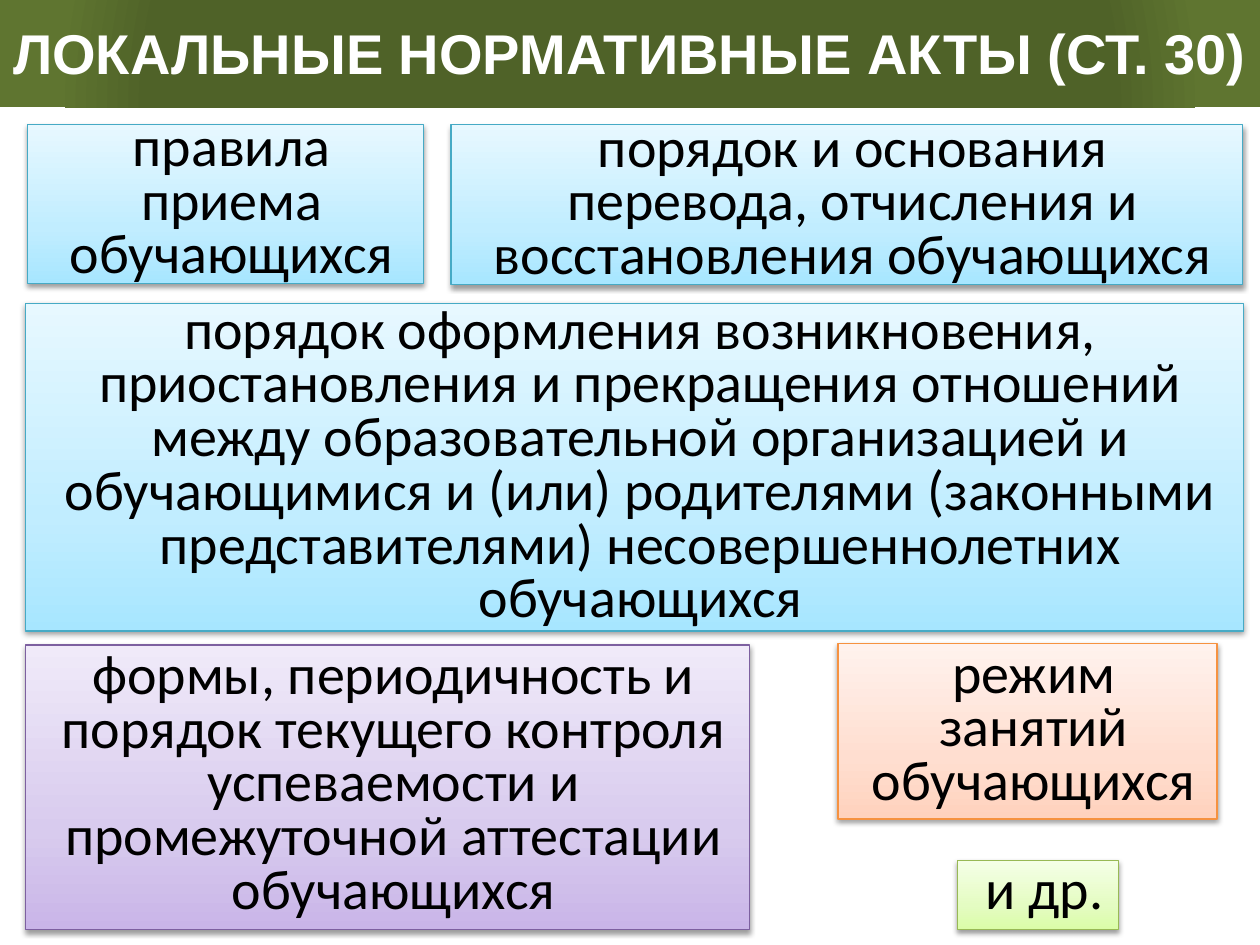
from lxml import etree
from pptx import Presentation
from pptx.dml.color import RGBColor
from pptx.enum.shapes import MSO_SHAPE
from pptx.enum.text import MSO_ANCHOR, MSO_AUTO_SIZE, PP_ALIGN
from pptx.oxml.ns import qn
from pptx.util import Inches, Pt

RECT = MSO_SHAPE.RECTANGLE
TOP, MIDDLE = MSO_ANCHOR.TOP, MSO_ANCHOR.MIDDLE
CENTER = PP_ALIGN.CENTER
NO_AUTOFIT = MSO_AUTO_SIZE.NONE

BLACK = RGBColor(0x00, 0x00, 0x00)
WHITE = RGBColor(0xFF, 0xFF, 0xFF)
BAND_STOPS = [(76, RGBColor(0x4F, 0x62, 0x28)), (91, RGBColor(0x5F, 0x75, 0x30))]


def scheme(line, *colors):
    """Pair a line colour with gradient stops running from bottom to top."""
    return line, list(zip((0, 35, 100), colors))


BLUE = scheme(RGBColor(0x46, 0xAA, 0xC5), RGBColor(0xA7, 0xE6, 0xFF),
              RGBColor(0xC1, 0xED, 0xFF), RGBColor(0xE7, 0xF8, 0xFF))
ORANGE = scheme(RGBColor(0xF6, 0x92, 0x40), RGBColor(0xFF, 0xD2, 0xBD),
                RGBColor(0xFF, 0xDE, 0xD0), RGBColor(0xFF, 0xF2, 0xED))
PURPLE = scheme(RGBColor(0x7D, 0x60, 0xA0), RGBColor(0xC9, 0xB5, 0xE8),
                RGBColor(0xD8, 0xCB, 0xEE), RGBColor(0xF0, 0xEA, 0xF9))
GREEN = scheme(RGBColor(0x98, 0xB9, 0x55), RGBColor(0xDA, 0xFD, 0xA7),
               RGBColor(0xE4, 0xFC, 0xC2), RGBColor(0xF5, 0xFF, 0xE7))

# box (left, top, width, height), colours, anchor, space before, text
ACTS = [
    ((0.22, 0.99, 3.14, 1.26), BLUE, MIDDLE, 5, "правила приема обучающихся"),
    ((3.58, 0.99, 6.28, 1.27), BLUE, MIDDLE, 5,
     "порядок и основания перевода, отчисления и восстановления обучающихся"),
    ((0.2, 2.41, 9.67, 2.6), BLUE, MIDDLE, 5,
     "порядок оформления возникновения, приостановления и прекращения отношений "
     "между образовательной организацией и обучающимися и (или) родителями "
     "(законными представителями) несовершеннолетних обучающихся"),
    ((0.2, 5.12, 5.75, 2.26), PURPLE, TOP, 6.4,
     "формы, периодичность и порядок текущего контроля успеваемости и "
     "промежуточной аттестации обучающихся"),
    ((6.65, 5.11, 3.01, 1.39), ORANGE, TOP, 6.4, "режим занятий обучающихся"),
    ((7.6, 6.83, 1.28, 0.55), GREEN, TOP, 6.4, "и др."),
]


def add_element(parent, tag, **attrs):
    return etree.SubElement(parent, qn(tag), {k: str(v) for k, v in attrs.items()})


def start_gradient(sp, stops):
    """Give the shape a gradient with these stops and return its element."""
    sp.fill.gradient()
    grad = sp._element.spPr.find(qn("a:gradFill"))
    for child in list(grad):
        grad.remove(child)
    stop_list = add_element(grad, "a:gsLst")
    for pos, color in stops:
        stop = add_element(stop_list, "a:gs", pos=pos * 1000)
        add_element(stop, "a:srgbClr", val=color)
    return grad


def add_soft_shadow(sp):
    sp.shadow.inherit = False
    effects = sp._element.spPr.find(qn("a:effectLst"))
    shadow = add_element(effects, "a:outerShdw", blurRad=Pt(3.1), dist=Pt(1.6),
                         dir=5400000, rotWithShape=0)
    color = add_element(shadow, "a:srgbClr", val=BLACK)
    add_element(color, "a:alpha", val=38000)


def write_text(sp, text, font, color, anchor, bold=False):
    tf = sp.text_frame
    tf.word_wrap = True
    tf.auto_size = NO_AUTOFIT
    tf.vertical_anchor = anchor
    p = tf.paragraphs[0]
    p.alignment = CENTER
    r = p.add_run()
    r.text = text
    r.font.name = font
    r.font.size = Pt(32)
    r.font.bold = bold
    r.font.color.rgb = color
    return p


def format_title(title, box, text):
    title.left, title.top, title.width, title.height = map(Inches, box)
    grad = start_gradient(title, BAND_STOPS)
    circle = add_element(grad, "a:path", path="circle")
    add_element(circle, "a:fillToRect", l=50000, t=130000, r=50000, b=-30000)
    write_text(title, text, "Arial", WHITE, MIDDLE, bold=True)
    title.text_frame.margin_left = title.text_frame.margin_right = Inches(0.05)


def add_act(slide, box, colors, anchor, space_before, text):
    line, stops = colors
    sp = slide.shapes.add_shape(RECT, *map(Inches, box))
    grad = start_gradient(sp, stops)
    add_element(grad, "a:lin", ang=270 * 60000, scaled=1)
    sp.line.color.rgb = line
    sp.line.width = Pt(0.75)
    add_soft_shadow(sp)
    p = write_text(sp, text, "Calibri", BLACK, anchor)
    p.line_spacing = 0.8
    p.space_before = Pt(space_before)
    p_pr = p._p.get_or_add_pPr()
    p_pr.set("marL", str(Inches(0.1)))
    p_pr.set("indent", "0")


def main():
    prs = Presentation()
    prs.slide_width, prs.slide_height = Inches(10), Inches(7.5)
    slide = prs.slides.add_slide(prs.slide_layouts[5])
    format_title(slide.shapes.title, (0, -0.03, 10, 0.88),
                 "ЛОКАЛЬНЫЕ НОРМАТИВНЫЕ АКТЫ (СТ. 30)")
    for act in ACTS:
        add_act(slide, *act)
    prs.save("out.pptx")


if __name__ == "__main__":
    main()
